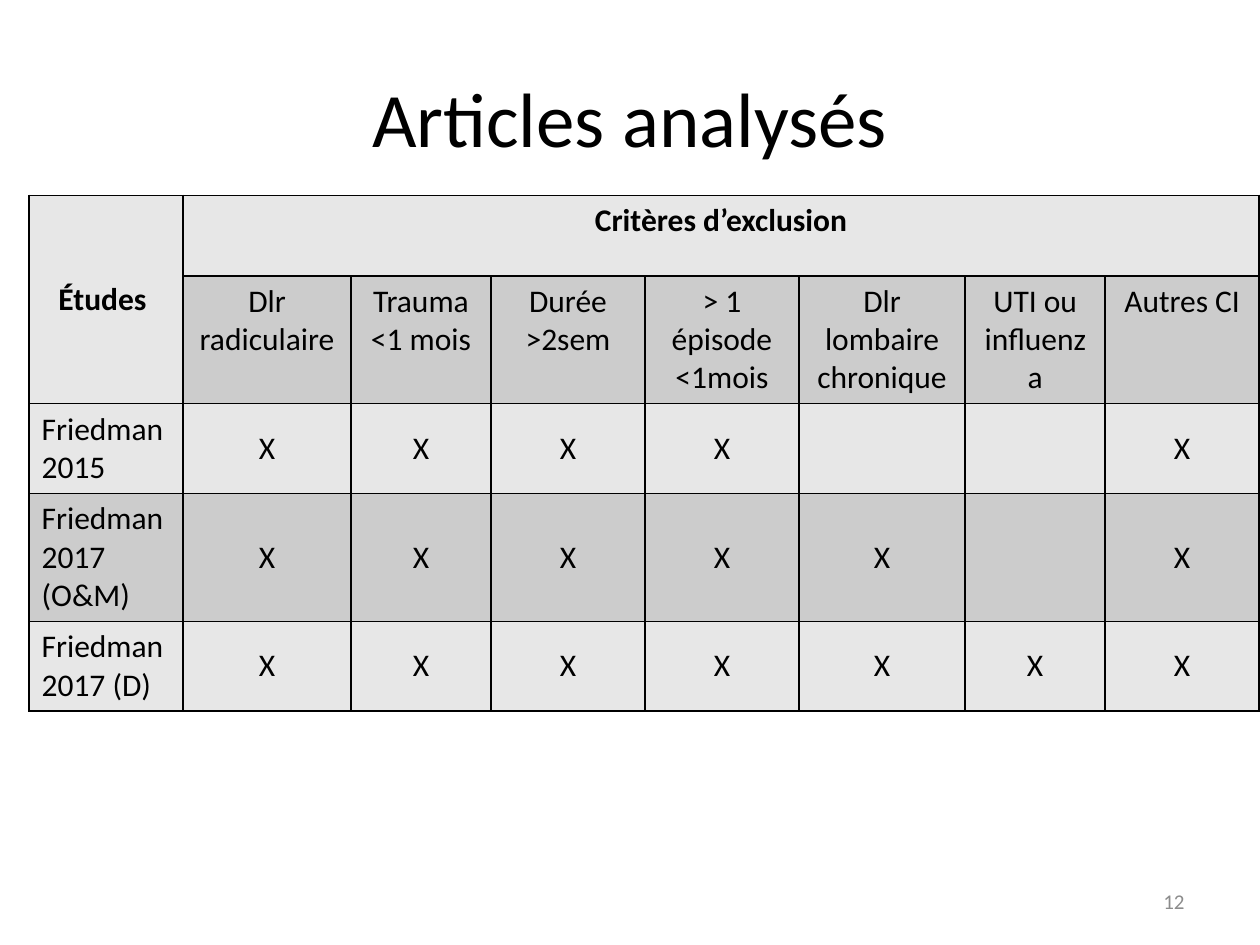
import pptx
import pptx.util
import pptx.dml.color
import pptx.enum.text
from dataclasses import dataclass
from lxml import etree
from pptx.oxml.ns import qn

Pt = pptx.util.Pt
Align = pptx.enum.text.PP_ALIGN
Anchor = pptx.enum.text.MSO_ANCHOR


@dataclass(frozen=True)
class Theme:
    font: str = "Calibri"
    title_size: int = 44
    table_size: int = 18
    number_size: int = 12
    ink: str = "000000"
    muted: str = "8C8C8C"
    light: str = "E7E7E7"
    dark: str = "CCCCCC"


THEME = Theme()
COLUMN_WIDTHS = (88, 96, 80, 88, 88, 95, 80, 88)
ROW_HEIGHT = 46
CRITERIA = ("Dlr radiculaire", "Trauma\n<1 mois", "Durée >2sem",
            "> 1 épisode <1mois", "Dlr lombaire chronique",
            "UTI ou influenza", "Autres CI")
# Each study with one mark per criterion
STUDIES = (("Friedman\n2015", "XXXX  X"),
           ("Friedman 2017 (O&M)", "XXXXX X"),
           ("Friedman 2017 (D)", "XXXXXXX"))


def write(frame, text, size, align, color=THEME.ink, bold=False):
    """Fill a text frame, one paragraph per line of text."""
    values = {"name": THEME.font, "size": Pt(size), "bold": bold}
    for index, line in enumerate(text.split("\n")):
        para = frame.add_paragraph() if index else frame.paragraphs[0]
        para.alignment = align
        span = para.add_run()
        span.text = line
        for name, value in values.items():
            setattr(span.font, name, value)
        span.font.color.rgb = pptx.dml.color.RGBColor.from_string(color)


def add_borders(cell):
    properties = cell._tc.get_or_add_tcPr()
    for side in ("a:lnL", "a:lnR", "a:lnT", "a:lnB"):
        line = etree.SubElement(properties, qn(side), w=str(Pt(1)))
        fill = etree.SubElement(line, qn("a:solidFill"))
        etree.SubElement(fill, qn("a:srgbClr"), val=THEME.ink)


def format_cell(cell, fill, text="", align=Align.CENTER,
                anchor=Anchor.TOP, bold=False):
    add_borders(cell)
    cell.fill.solid()
    cell.fill.fore_color.rgb = pptx.dml.color.RGBColor.from_string(fill)
    cell.vertical_anchor = anchor
    if text.strip():
        write(cell.text_frame, text, THEME.table_size, align, bold=bold)


def add_title(slide, text):
    title = slide.shapes.title
    place = {"left": 36, "top": 21.6, "width": 648, "height": 90}
    for name, value in place.items():
        setattr(title, name, Pt(value))
    title.text_frame.vertical_anchor = Anchor.MIDDLE
    write(title.text_frame, text, THEME.title_size, Align.CENTER)


def add_criteria_table(slide):
    row_count = len(STUDIES) + 2
    table = slide.shapes.add_table(
        row_count, len(COLUMN_WIDTHS), Pt(16.6), Pt(111.6),
        Pt(sum(COLUMN_WIDTHS)), Pt(ROW_HEIGHT * row_count)).table
    table.first_row = table.horz_banding = False
    for column, width in zip(table.columns, COLUMN_WIDTHS):
        column.width = Pt(width)

    for index in range(len(COLUMN_WIDTHS)):
        text = {0: "Études ", 1: "Critères d’exclusion"}.get(index, "")
        anchor = Anchor.TOP if index else Anchor.MIDDLE
        format_cell(table.cell(0, index), THEME.light, text,
                    anchor=anchor, bold=True)
    format_cell(table.cell(1, 0), THEME.light)
    for index, criterion in enumerate(CRITERIA, 1):
        format_cell(table.cell(1, index), THEME.dark, criterion)
    for row, (study, marks) in enumerate(STUDIES, 2):
        fill = THEME.dark if row % 2 else THEME.light
        format_cell(table.cell(row, 0), fill, study, Align.LEFT)
        for index, mark in enumerate(marks, 1):
            format_cell(table.cell(row, index), fill, mark,
                        anchor=Anchor.MIDDLE)

    table.cell(0, 0).merge(table.cell(1, 0))
    table.cell(0, 1).merge(table.cell(0, len(CRITERIA)))


def add_slide_number(slide, text):
    box = slide.shapes.add_textbox(Pt(516), Pt(500.5), Pt(168), Pt(28.75))
    box.text_frame.word_wrap = True
    box.text_frame.vertical_anchor = Anchor.MIDDLE
    write(box.text_frame, text, THEME.number_size, Align.RIGHT, THEME.muted)


def main():
    deck = pptx.Presentation()
    deck.slide_width, deck.slide_height = Pt(720), Pt(540)
    slide = deck.slides.add_slide(deck.slide_layouts[5])
    add_title(slide, "Articles analysés")
    add_criteria_table(slide)
    add_slide_number(slide, "12")
    deck.save("out.pptx")


if __name__ == "__main__":
    main()
